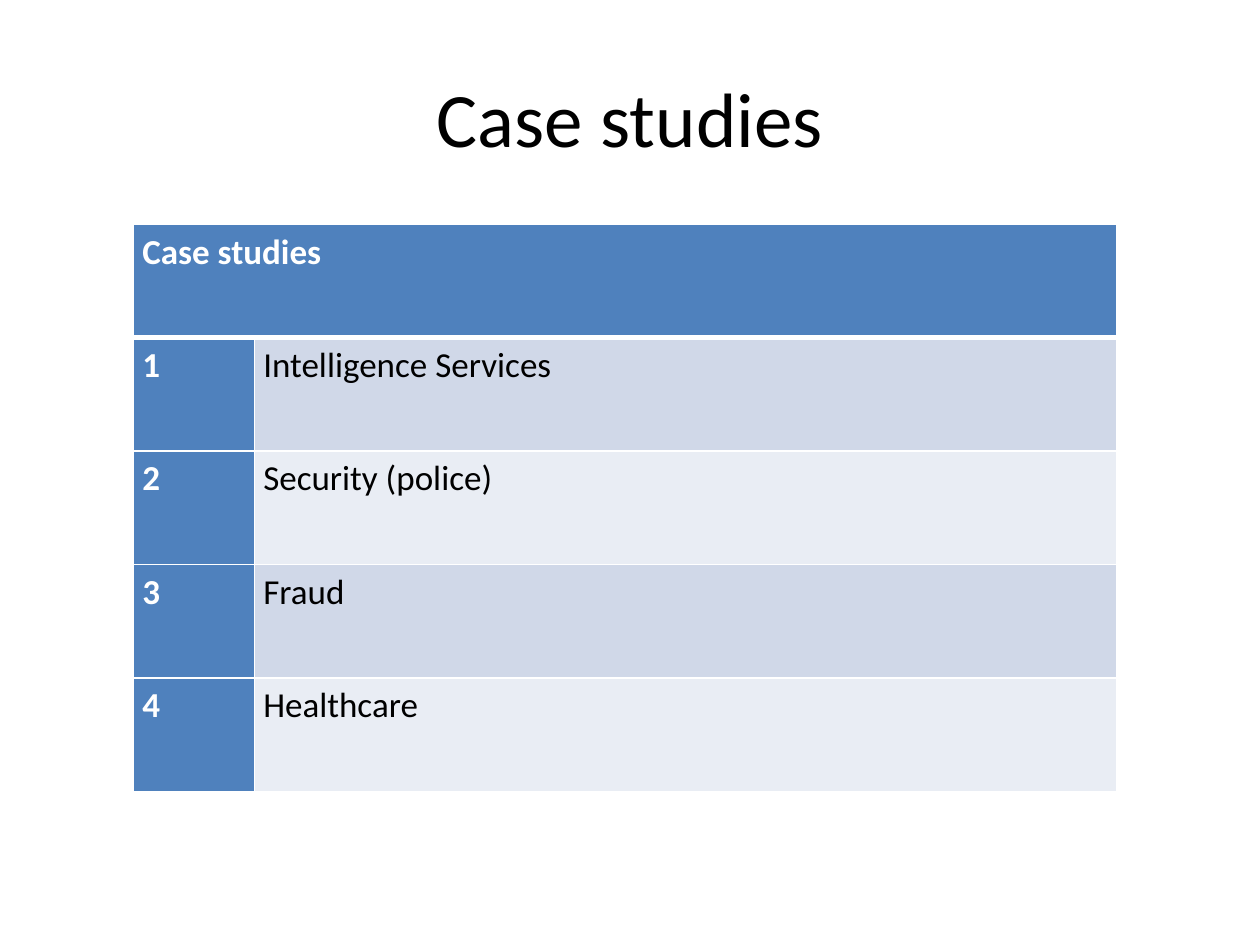
from dataclasses import dataclass

from lxml import etree
from pptx import Presentation, util as u
from pptx.dml.color import RGBColor
from pptx.enum import text
from pptx.oxml.ns import qn

WIDTH, HEIGHT = 10, 7.5
BLUE, WHITE, BLACK = "4F81BD", "FFFFFF", "000000"
BANDS = ("D0D8E8", "E9EDF4")
COLUMNS = (0.96, 6.84)
ROW_HEIGHT = 0.9
CASES = ("Intelligence Services", "Security (police)", "Fraud", "Healthcare")


@dataclass
class CellStyle:
    fill: str
    color: str
    bold: bool


HEADING = CellStyle(BLUE, WHITE, True)


def rgb(value: str) -> RGBColor:
    return RGBColor.from_string(value)


def add_borders(cell, top: float = 1, bottom: float = 1) -> None:
    tc_pr = cell._tc.get_or_add_tcPr()
    widths = {"a:lnL": 1, "a:lnR": 1, "a:lnT": top, "a:lnB": bottom}
    for i, (tag, width) in enumerate(widths.items()):
        ln = etree.Element(qn(tag), w=str(u.Pt(width)))
        fill = etree.SubElement(ln, qn("a:solidFill"))
        etree.SubElement(fill, qn("a:srgbClr"), val=WHITE)
        tc_pr.insert(i, ln)


def write_cell(cell, words: str, style: CellStyle) -> None:
    cell.fill.solid()
    cell.fill.fore_color.rgb = rgb(style.fill)
    cell.margin_left = cell.margin_right = u.Inches(0.07)
    cell.margin_top = cell.margin_bottom = 0
    p = cell.text_frame.paragraphs[0]
    p.text = words
    p.line_spacing = 1.15
    p.font.name, p.font.size = "Calibri", u.Pt(20)
    p.font.bold = style.bold
    p.font.color.rgb = rgb(style.color)


def add_title(s, words: str) -> None:
    sp = s.shapes.title
    sp.left, sp.top = u.Inches(WIDTH * 0.05), u.Inches(HEIGHT * 0.04)
    sp.width, sp.height = u.Inches(WIDTH * 0.9), u.Inches(1.25)
    tf = sp.text_frame
    tf.text = words
    tf.vertical_anchor = text.MSO_ANCHOR.MIDDLE
    p = tf.paragraphs[0]
    p.alignment = text.PP_ALIGN.CENTER
    p.font.name, p.font.size = "Calibri", u.Pt(44)
    p.font.color.rgb = rgb(BLACK)


def add_case_table(s, heading: str, cases: tuple[str, ...]) -> None:
    rows = len(cases) + 1
    table = s.shapes.add_table(
        rows, len(COLUMNS), u.Inches(1.06), u.Inches(1.78),
        u.Inches(sum(COLUMNS)), u.Inches(rows * ROW_HEIGHT)).table
    for column, width in zip(table.columns, COLUMNS):
        column.width = u.Inches(width)
    for row in table.rows:
        row.height = u.Inches(ROW_HEIGHT)
    table.cell(0, 0).merge(table.cell(0, 1))
    write_cell(table.cell(0, 0), heading, HEADING)
    for i, case in enumerate(cases, 1):
        band = CellStyle(BANDS[(i - 1) % 2], BLACK, False)
        write_cell(table.cell(i, 0), str(i), HEADING)
        write_cell(table.cell(i, 1), case, band)
    for i in range(rows):
        for j in range(len(COLUMNS)):
            add_borders(table.cell(i, j), top=3 if i == 1 else 1,
                        bottom=3 if i == 0 else 1)


def main() -> None:
    prs = Presentation()
    prs.slide_width, prs.slide_height = u.Inches(WIDTH), u.Inches(HEIGHT)
    s = prs.slides.add_slide(prs.slide_layouts[5])
    add_title(s, "Case studies")
    add_case_table(s, "Case studies", CASES)
    prs.save("out.pptx")


if __name__ == "__main__":
    main()
